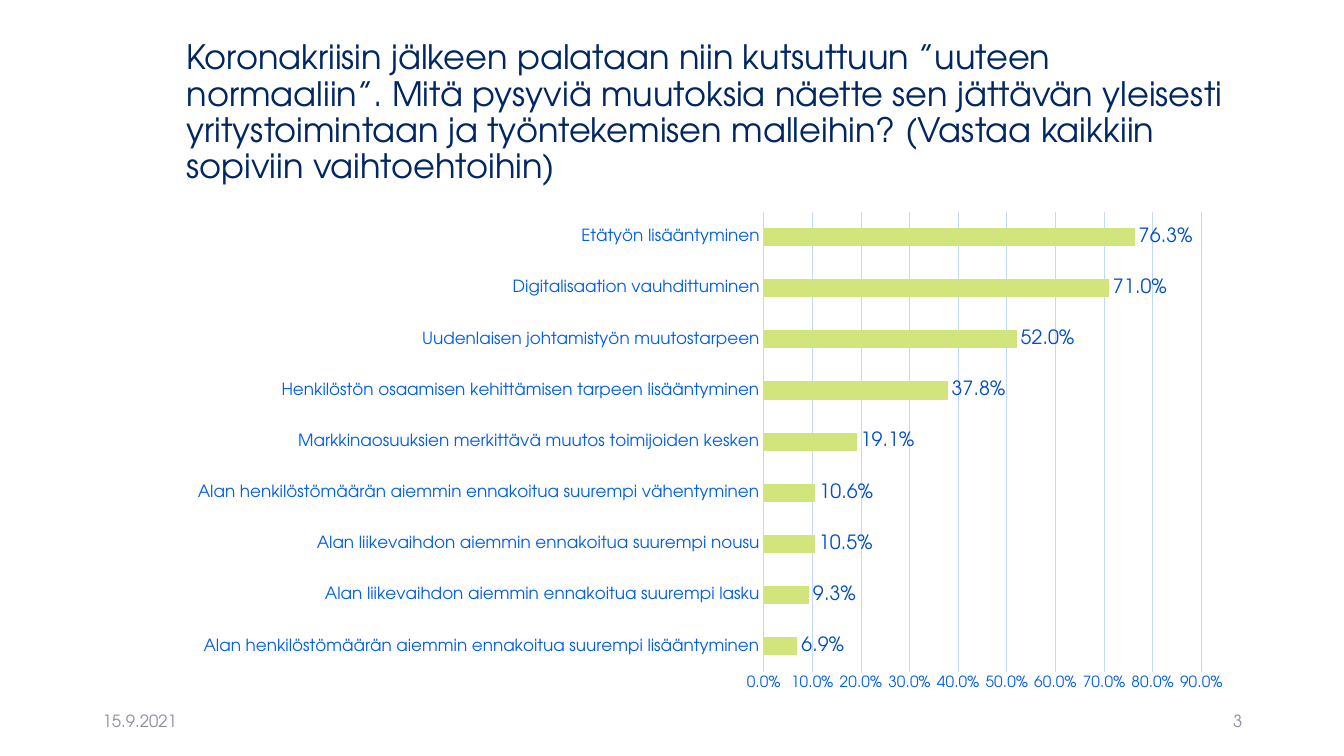
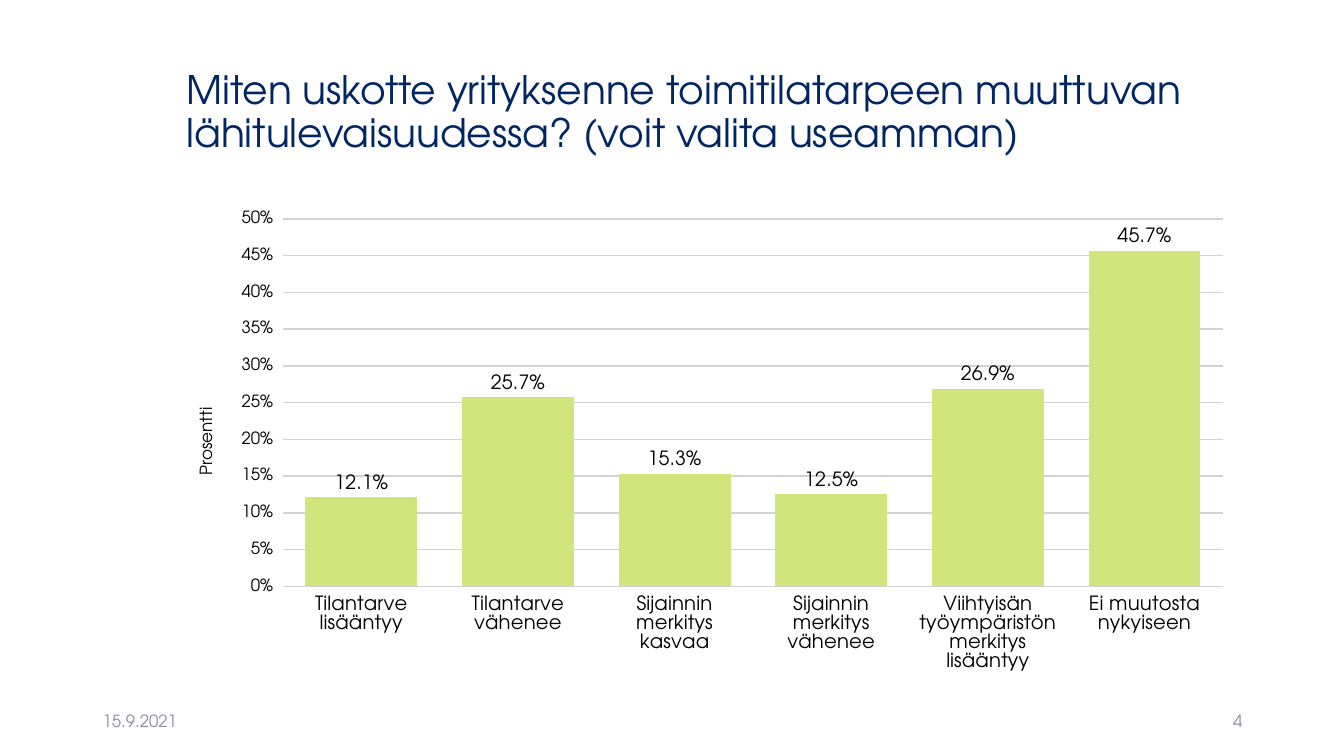
from dataclasses import dataclass

from pptx import Presentation
from pptx.chart.data import CategoryChartData
from pptx.dml.color import RGBColor
from pptx.enum.chart import XL_CHART_TYPE, XL_LABEL_POSITION, XL_TICK_MARK
from pptx.enum.text import MSO_ANCHOR, MSO_AUTO_SIZE, PP_ALIGN
from pptx.util import Inches, Pt


@dataclass(frozen=True)
class Theme:
    font: str = "TeX Gyre Adventor"
    navy: str = "002663"
    blue: str = "005DF3"
    label_blue: str = "004DCA"
    pale_blue: str = "C1D9FF"
    green: str = "D1E57C"
    black: str = "000000"
    grid_gray: str = "D3D3D3"
    footer_gray: str = "8C8E9F"
    long_title_size: int = 24
    title_size: int = 28
    label_size: int = 14
    text_size: int = 12
    small_size: int = 11


THEME = Theme()
DATE = "15.9.2021"
TITLE_BOX = (1.75, 0.4, 10.59, 1.45)
DATE_BOX = (0.92, 6.95, 3, 0.4)
NUMBER_BOX = (9.42, 6.95, 3, 0.4)
CHANGES_BOX = (1.75, 2, 10.59, 4.95)
PREMISES_BOX = (1.75, 2, 10.59, 4.76)

CHANGES = {
    "Alan henkilöstömäärän aiemmin ennakoitua suurempi lisääntyminen": 0.069,
    "Alan liikevaihdon aiemmin ennakoitua suurempi lasku": 0.093,
    "Alan liikevaihdon aiemmin ennakoitua suurempi nousu": 0.105,
    "Alan henkilöstömäärän aiemmin ennakoitua suurempi vähentyminen": 0.106,
    "Markkinaosuuksien merkittävä muutos toimijoiden kesken": 0.191,
    "Henkilöstön osaamisen kehittämisen tarpeen lisääntyminen": 0.378,
    "Uudenlaisen johtamistyön muutostarpeen": 0.52,
    "Digitalisaation vauhdittuminen": 0.71,
    "Etätyön lisääntyminen": 0.763,
}
PREMISES = {
    "Tilantarve lisääntyy": 0.121,
    "Tilantarve vähenee": 0.257,
    "Sijainnin merkitys kasvaa": 0.153,
    "Sijainnin merkitys vähenee": 0.125,
    "Viihtyisän työympäristön merkitys lisääntyy": 0.269,
    "Ei muutosta nykyiseen": 0.457,
}


def inches(box):
    return [Inches(length) for length in box]


def style_font(font, size, color):
    font.name = THEME.font
    font.size = Pt(size)
    font.bold = False
    font.color.rgb = RGBColor.from_string(color)


def style_line(line, color, width):
    line.color.rgb = RGBColor.from_string(color)
    line.width = Pt(width)


def place_title(slide, text, size):
    title = slide.shapes.title
    title.left, title.top, title.width, title.height = inches(TITLE_BOX)
    frame = title.text_frame
    frame.text = text
    frame.word_wrap = True
    frame.auto_size = MSO_AUTO_SIZE.NONE
    frame.vertical_anchor = MSO_ANCHOR.MIDDLE
    paragraph = frame.paragraphs[0]
    paragraph.alignment = PP_ALIGN.LEFT
    paragraph.line_spacing = 0.9
    style_font(paragraph.font, size, THEME.navy)


def add_footer(slide, number):
    parts = ((DATE_BOX, DATE, PP_ALIGN.LEFT),
             (NUMBER_BOX, str(number), PP_ALIGN.RIGHT))
    for box, text, alignment in parts:
        frame = slide.shapes.add_textbox(*inches(box)).text_frame
        frame.word_wrap = True
        frame.vertical_anchor = MSO_ANCHOR.MIDDLE
        paragraph = frame.paragraphs[0]
        paragraph.text = text
        paragraph.alignment = alignment
        style_font(paragraph.font, THEME.text_size, THEME.footer_gray)


def add_question_slide(presentation, title, title_size, number):
    """Add a slide with its title and footer, ready for a chart."""
    slide = presentation.slides.add_slide(presentation.slide_layouts[5])
    place_title(slide, title, title_size)
    add_footer(slide, number)
    return slide


def add_share_chart(slide, box, chart_type, shares, gap, label_color):
    """Add a one-series chart of percentages with the shared look."""
    data = CategoryChartData(number_format="0.0%")
    data.categories = list(shares)
    data.add_series("Series 1", list(shares.values()))
    chart = slide.shapes.add_chart(chart_type, *inches(box), data).chart
    chart.has_title = False
    chart.has_legend = False
    style_font(chart.font, THEME.text_size, label_color)

    plot = chart.plots[0]
    plot.gap_width = gap
    plot.vary_by_categories = False
    fill = plot.series[0].format.fill
    fill.solid()
    fill.fore_color.rgb = RGBColor.from_string(THEME.green)

    plot.has_data_labels = True
    labels = plot.data_labels
    labels.show_value = True
    labels.position = XL_LABEL_POSITION.OUTSIDE_END
    labels.number_format = "0.0%"
    labels.number_format_is_linked = False
    style_font(labels.font, THEME.label_size, label_color)
    return chart


def style_category_axis(axis, size, color, tick):
    axis.major_tick_mark = tick
    axis.has_major_gridlines = False
    style_font(axis.tick_labels.font, size, color)


def style_value_axis(axis, maximum, step, number_format, size, color, tick):
    axis.minimum_scale = 0
    axis.maximum_scale = maximum
    axis.major_unit = step
    axis.major_tick_mark = tick
    axis.format.line.fill.background()
    axis.tick_labels.number_format = number_format
    axis.tick_labels.number_format_is_linked = False
    style_font(axis.tick_labels.font, size, color)


def add_changes_chart(slide, box):
    chart = add_share_chart(slide, box, XL_CHART_TYPE.BAR_CLUSTERED, CHANGES,
                            182, THEME.label_blue)
    categories, values = chart.category_axis, chart.value_axis
    style_category_axis(categories, THEME.text_size, THEME.blue,
                        XL_TICK_MARK.NONE)
    style_line(categories.format.line, THEME.pale_blue, 0.75)
    style_value_axis(values, 0.9, 0.1, "0.0%", THEME.small_size, THEME.blue,
                     XL_TICK_MARK.NONE)
    style_line(values.major_gridlines.format.line, THEME.pale_blue, 0.75)


def add_premises_chart(slide, box):
    chart = add_share_chart(slide, box, XL_CHART_TYPE.COLUMN_CLUSTERED,
                            PREMISES, 40, THEME.black)
    categories, values = chart.category_axis, chart.value_axis
    style_category_axis(categories, THEME.label_size, THEME.black,
                        XL_TICK_MARK.OUTSIDE)
    categories.format.line.fill.background()
    style_value_axis(values, 0.5, 0.05, "0%", THEME.text_size, THEME.black,
                     XL_TICK_MARK.OUTSIDE)
    style_line(values.major_gridlines.format.line, THEME.grid_gray, 1)
    frame = values.axis_title.text_frame
    frame.text = "Prosentti"
    style_font(frame.paragraphs[0].font, THEME.text_size, THEME.black)


def main():
    presentation = Presentation()
    presentation.slide_width = Inches(13.33)
    presentation.slide_height = Inches(7.5)

    changes = add_question_slide(
        presentation,
        "Koronakriisin jälkeen palataan niin kutsuttuun ”uuteen normaaliin”. "
        "Mitä pysyviä muutoksia näette sen jättävän yleisesti yritystoimintaan "
        "ja työntekemisen malleihin? (Vastaa kaikkiin sopiviin vaihtoehtoihin)",
        THEME.long_title_size, 3)
    add_changes_chart(changes, CHANGES_BOX)

    premises = add_question_slide(
        presentation,
        "Miten uskotte yrityksenne toimitilatarpeen muuttuvan "
        "lähitulevaisuudessa? (voit valita useamman)",
        THEME.title_size, 4)
    add_premises_chart(premises, PREMISES_BOX)

    presentation.save("out.pptx")


if __name__ == "__main__":
    main()
